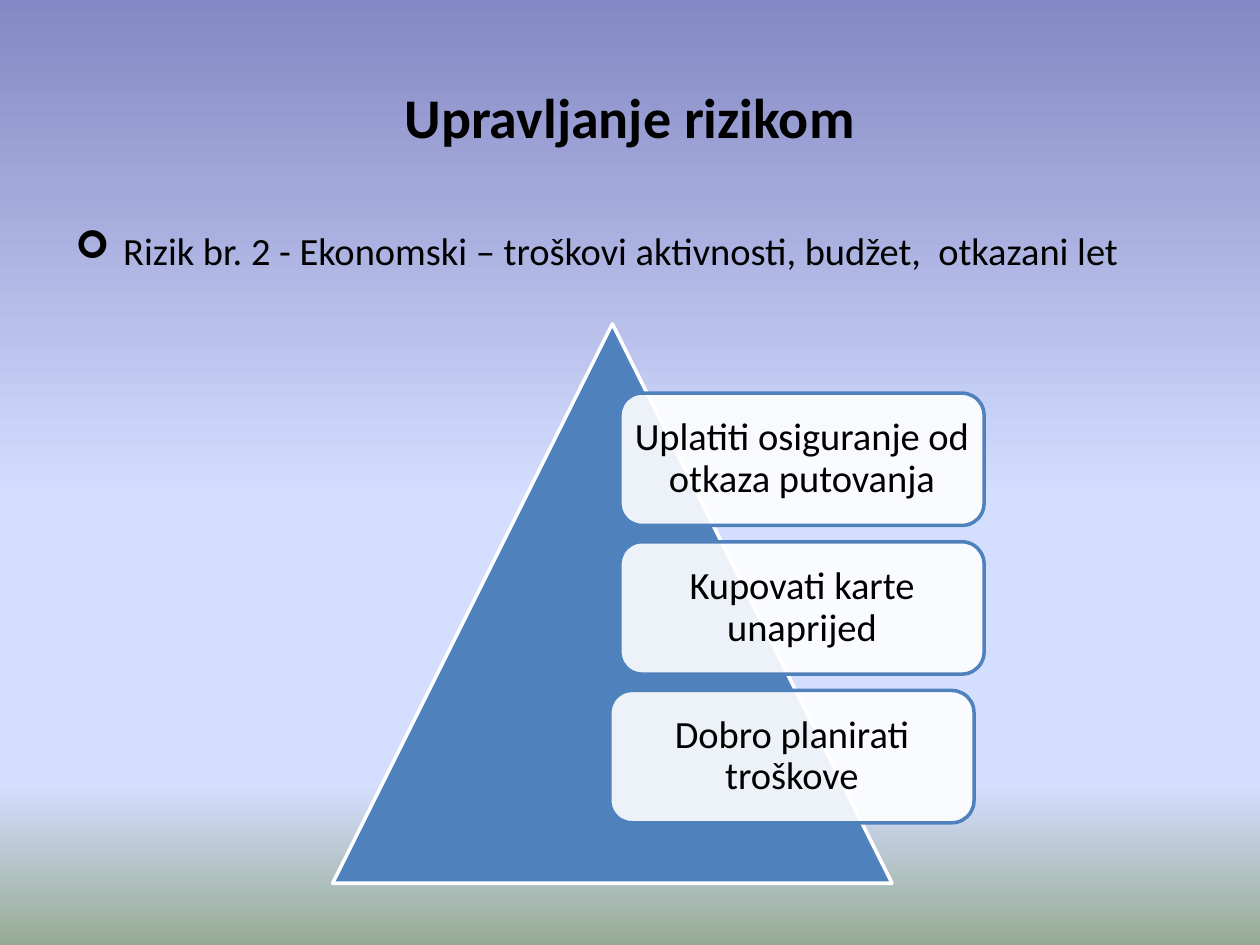
from lxml import etree
from pptx import Presentation
from pptx.dml.color import RGBColor
from pptx.enum.shapes import MSO_SHAPE
from pptx.enum.text import MSO_ANCHOR, PP_ALIGN
from pptx.oxml.ns import qn
from pptx.util import Inches, Pt

FONT = "Calibri"
BLUE, WHITE, BLACK = "4F81BD", "FFFFFF", "000000"
SKY = [(0, "8488C4"), (53, "D4DEFF"), (83, "D4DEFF"), (100, "96AB94")]
MEASURES = [
    ("Uplatiti osiguranje od otkaza putovanja", 4.92),
    ("Kupovati karte unaprijed", 4.92),
    ("Dobro planirati troškove", 4.84),
]


def rgb(color):
    return RGBColor.from_string(color)


def place(shape, left, top, width, height):
    shape.left, shape.top = Inches(left), Inches(top)
    shape.width, shape.height = Inches(width), Inches(height)


def write(frame, text, size, align, bold=False):
    frame.word_wrap = True
    frame.text = text
    paragraph = frame.paragraphs[0]
    paragraph.alignment = align
    font = paragraph.runs[0].font
    font.name, font.size, font.bold = FONT, Pt(size), bold
    font.color.rgb = rgb(BLACK)
    return paragraph


def add_filled(slide, kind, box, fill, line):
    shape = slide.shapes.add_shape(kind, *map(Inches, box))
    shape.shadow.inherit = False
    shape.fill.solid()
    shape.fill.fore_color.rgb = rgb(fill)
    shape.line.color.rgb = rgb(line)
    shape.line.width = Pt(2)
    return shape


def paint_background(slide):
    fill = slide.background.fill
    fill.gradient()
    fill.gradient_angle = 270  # counter-clockwise: top to bottom
    stops = slide.element.xpath(".//p:bg//a:gsLst")[0]
    for stop in list(stops):
        stops.remove(stop)
    for position, color in SKY:
        stop = etree.SubElement(stops, qn("a:gs"), pos=str(position * 1000))
        etree.SubElement(stop, qn("a:srgbClr"), val=color)


def add_title(slide, box):
    title = slide.shapes.title
    place(title, *box)
    title.text_frame.vertical_anchor = MSO_ANCHOR.MIDDLE
    write(title.text_frame, "Upravljanje rizikom", 32, PP_ALIGN.CENTER, bold=True)


def add_risk(slide, box):
    risk = slide.shapes.add_textbox(*map(Inches, box))
    paragraph = write(
        risk.text_frame,
        "Rizik br. 2 - Ekonomski – troškovi aktivnosti, budžet,  otkazani let",
        22, PP_ALIGN.LEFT)
    paragraph.space_before = Pt(4.4)
    # Arrow bullet with a hanging indent
    properties = paragraph.runs[0].font and paragraph._p.get_or_add_pPr()
    properties.set("marL", str(Inches(0.38)))
    properties.set("indent", str(-Inches(0.38)))
    etree.SubElement(properties, qn("a:buFont"), typeface="Wingdings")
    etree.SubElement(properties, qn("a:buChar"), char="➢")


def add_pyramid(slide, box):
    left, top, side, _ = box
    add_filled(slide, MSO_SHAPE.ISOSCELES_TRIANGLE, box, BLUE, WHITE)

    # Measures: equal steps down the right-hand side, lowest at the back
    card_width, card_height, step = 2.89, 1.05, 1.18
    for row, (text, card_left) in reversed(list(enumerate(MEASURES))):
        card_box = (card_left, top + 0.55 + row * step, card_width, card_height)
        card = add_filled(slide, MSO_SHAPE.ROUNDED_RECTANGLE, card_box, WHITE, BLUE)
        white = card.element.spPr.find(qn("a:solidFill"))[0]
        etree.SubElement(white, qn("a:alpha"), val="90000")
        frame = card.text_frame
        frame.margin_left = frame.margin_right = Inches(0.04)
        frame.margin_top = frame.margin_bottom = Inches(0.04)
        frame.vertical_anchor = MSO_ANCHOR.MIDDLE
        write(frame, text, 22, PP_ALIGN.CENTER).line_spacing = 0.9


def main():
    presentation = Presentation()
    presentation.slide_width, presentation.slide_height = Inches(10), Inches(7.5)
    slide = presentation.slides.add_slide(presentation.slide_layouts[5])
    paint_background(slide)
    add_title(slide, (0.5, 0.3, 9, 1.25))
    add_risk(slide, (0.5, 1.75, 9, 0.6))
    add_pyramid(slide, (2.64, 2.57, 4.44, 4.44))
    presentation.save("out.pptx")


if __name__ == "__main__":
    main()
